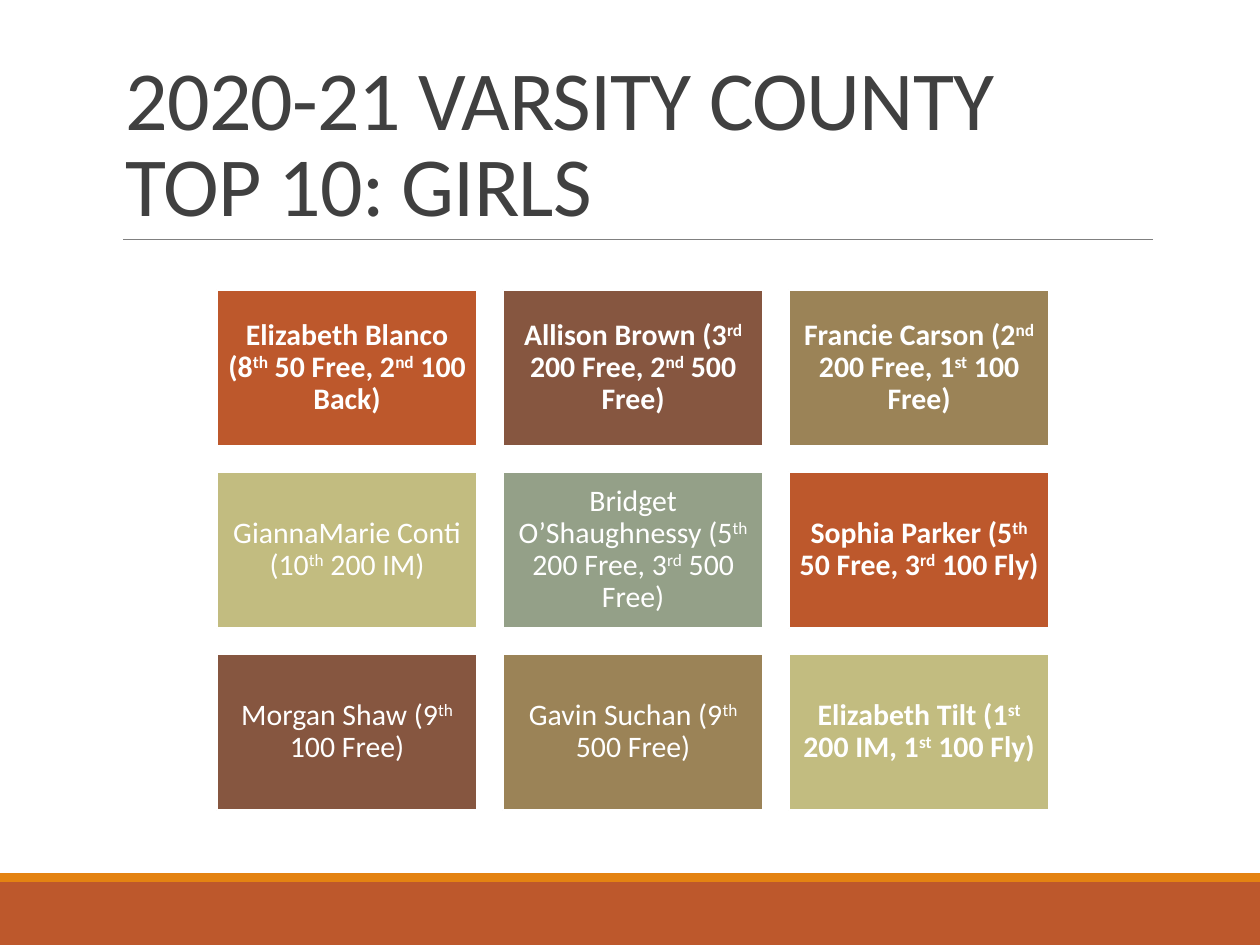
from itertools import cycle

from pptx import Presentation
from pptx.dml.color import RGBColor
from pptx.enum.shapes import MSO_CONNECTOR as Connector, MSO_SHAPE as Shape
from pptx.enum.text import MSO_ANCHOR as Anchor, PP_ALIGN as Align
from pptx.oxml.ns import qn
from pptx.util import Inches, Pt

WIDTH, HEIGHT = 10, 7.5
GRID_LEFT, GRID_TOP = 1.72, 2.3
CARD_WIDTH, CARD_HEIGHT = 2.07, 1.24
STEP_X, STEP_Y = 2.27, 1.445
COLUMNS = 3
CARD_COLOURS = ["BD582C", "865640", "9B8357", "C2BC80", "94A088"]

# Text between bars is superscript; the flag marks bold cards.
SWIMMERS = [
    ("Elizabeth Blanco (8|th| 50 Free, 2|nd| 100 Back)", True),
    ("Allison Brown (3|rd| 200 Free, 2|nd| 500 Free)", True),
    ("Francie Carson (2|nd| 200 Free, 1|st| 100 Free)", True),
    ("GiannaMarie Conti (10|th| 200 IM)", False),
    ("Bridget O’Shaughnessy (5|th| 200 Free, 3|rd| 500 Free)", False),
    ("Sophia Parker (5|th| 50 Free, 3|rd| 100 Fly) ", True),
    ("Morgan Shaw (9|th| 100 Free)", False),
    ("Gavin Suchan (9|th| 500 Free)", False),
    ("Elizabeth Tilt (1|st| 200 IM, 1|st| 100 Fly)", True),
]


def colour(value):
    return RGBColor.from_string(value)


def apply(target, values):
    for name, value in values.items():
        setattr(target, name, value)


def format_font(font, size, hex_colour, bold=False):
    apply(font, {"name": "Calibri", "size": Pt(size), "bold": bold})
    font.color.rgb = colour(hex_colour)


def add_block(page, left, top, width, height, fill):
    block = page.shapes.add_shape(Shape.RECTANGLE, *map(Inches, (left, top, width, height)))
    block.shadow.inherit = False
    block.fill.solid()
    block.fill.fore_color.rgb = colour(fill)
    block.line.fill.background()
    return block


def add_title(page, first_line, second_line):
    box = page.shapes.add_textbox(*map(Inches, (0.9, 0.31, 8.25, 1.59)))
    apply(box.text_frame, {"word_wrap": True, "vertical_anchor": Anchor.BOTTOM})
    para = box.text_frame.paragraphs[0]
    para.line_spacing = 0.85
    for index, text in enumerate((first_line, second_line)):
        if index:
            para.add_line_break()
        span = para.add_run()
        span.text = text
        format_font(span.font, 48, "404040")
        span._r.get_or_add_rPr().set("spc", "-50")
    format_font(para.font, 48, "404040")


def add_rule(page, left, right, y):
    rule = page.shapes.add_connector(
        Connector.STRAIGHT, *map(Inches, (left, y, right, y)))
    rule.line.color.rgb = colour("808080")
    rule.line.width = Pt(0.5)
    properties = rule._element.spPr
    properties.append(properties.makeelement(qn("a:effectLst"), {}))


def add_card(page, column, row, fill, text, bold):
    card = add_block(page, GRID_LEFT + column * STEP_X, GRID_TOP + row * STEP_Y,
                     CARD_WIDTH, CARD_HEIGHT, fill)
    card.line.color.rgb = colour("FFFFFF")
    card.line.width = Pt(1.25)
    frame = card.text_frame
    apply(frame, {"word_wrap": True, "vertical_anchor": Anchor.MIDDLE})
    apply(frame, {f"margin_{side}": Inches(0.07)
                  for side in ("left", "top", "right", "bottom")})
    para = frame.paragraphs[0]
    apply(para, {"alignment": Align.CENTER, "line_spacing": 0.9})
    for index, part in enumerate(text.split("|")):
        span = para.add_run()
        span.text = part
        format_font(span.font, 17, "FFFFFF", bold)
        if index % 2:
            span._r.get_or_add_rPr().set("baseline", "30000")


def main():
    deck = Presentation()
    apply(deck, {"slide_width": Inches(WIDTH), "slide_height": Inches(HEIGHT)})
    page = deck.slides.add_slide(deck.slide_layouts[6])
    add_block(page, 0, 7, WIDTH, 0.5, "BD582C")
    add_block(page, 0, 6.93, WIDTH, 0.07, "E48312")
    add_rule(page, 0.98, 9.15, 1.9)
    add_title(page, "2020-21 VARSITY COUNTY ", "TOP 10: GIRLS")
    for index, ((text, bold), fill) in enumerate(zip(SWIMMERS, cycle(CARD_COLOURS))):
        row, column = divmod(index, COLUMNS)
        add_card(page, column, row, fill, text, bold)
    deck.save("out.pptx")


if __name__ == "__main__":
    main()
